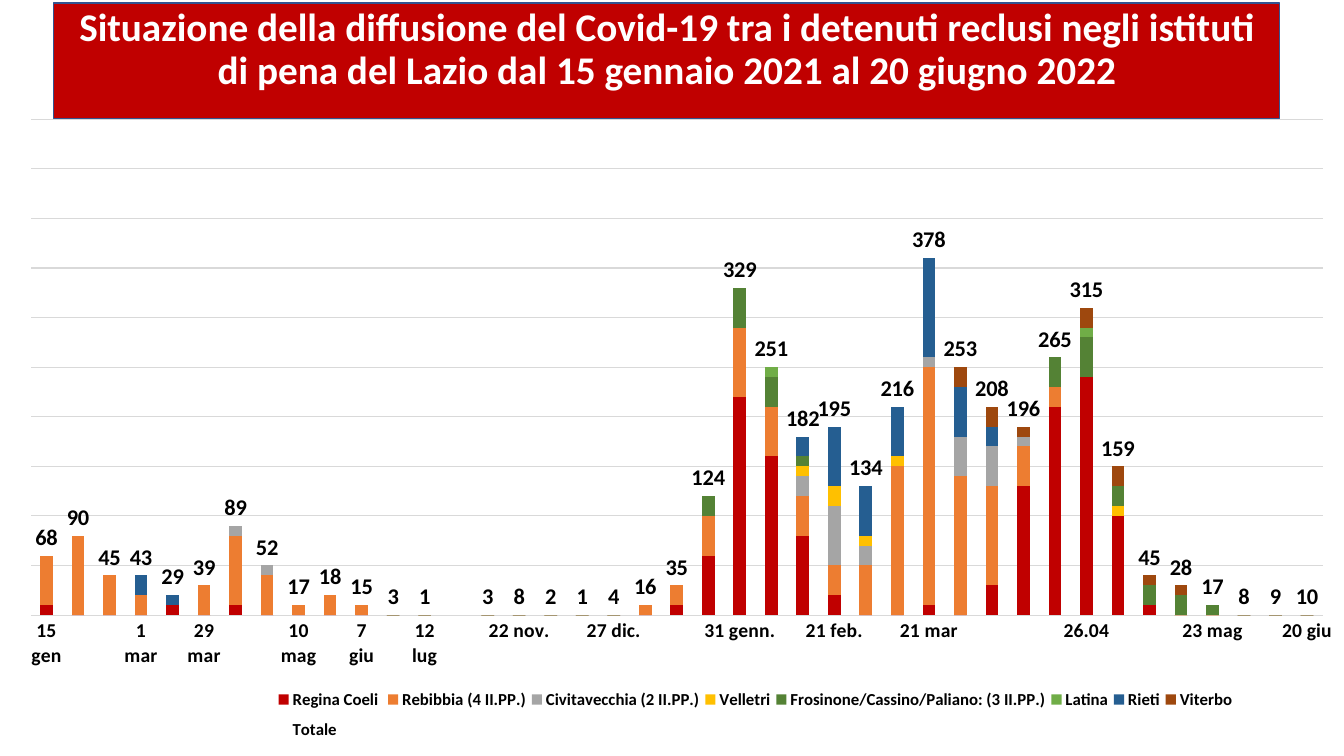
"""Build the slide on Covid-19 among prison inmates in Lazio."""
from dataclasses import dataclass
from typing import NamedTuple, Optional

from lxml.etree import SubElement
from pptx import Presentation
from pptx.chart.data import CategoryChartData
from pptx.dml.color import RGBColor
from pptx.enum.chart import XL_CHART_TYPE, XL_LABEL_POSITION, XL_LEGEND_POSITION, XL_TICK_MARK
from pptx.enum.shapes import MSO_SHAPE
from pptx.enum.text import MSO_ANCHOR, PP_ALIGN
from pptx.oxml import parse_xml
from pptx.oxml.ns import nsdecls, qn
from pptx.util import Inches, Pt


@dataclass(frozen=True)
class Theme:
    font: str = "Calibri"
    banner: str = "C00000"
    banner_line: str = "325491"
    light: str = "FFFFFF"
    dark: str = "000000"
    grid: str = "D9D9D9"
    title_size: int = 28
    value_size: int = 16
    axis_size: int = 14
    legend_size: int = 12


class Area(NamedTuple):
    left: float
    top: float
    width: float
    height: float


class Prison(NamedTuple):
    name: str
    color: str
    waves: dict[int, list[int]]


class Period(NamedTuple):
    label: str
    totals: list[Optional[int]]


THEME = Theme()
WIDTH, HEIGHT = Inches(13.33), Inches(7.5)
BANNER = Area(0.04, 0.004, 0.912, 0.153)
CHART = Area(0.016, 0.157, 0.984, 0.843)
PLOT = Area(0.007, 0.001, 0.977, 0.778)
LEGEND = Area(0.19, 0.88, 0.73, 0.11)
TITLE = ("Situazione della diffusione del Covid-19 tra i detenuti reclusi negli istituti "
         "di pena del Lazio dal 15 gennaio 2021 al 20 giugno 2022")
PRISONS = (
    Prison("Regina Coeli ", "C00000", {
        0: [10], 4: [10], 6: [10], 20: [10, 60, 220, 160, 80, 20],
        28: [10], 30: [30, 130, 210, 240, 100, 10]}),
    Prison("Rebibbia (4 II.PP.)", "ED7D31", {
        0: [50, 80, 40, 20], 5: [30, 70, 40, 10, 20, 10],
        19: [10, 20, 40, 70, 50, 40, 30, 50, 150, 240, 140, 100, 40, 20]}),
    Prison("Civitavecchia (2 II.PP.)", "A5A5A5", {
        6: [10, 10], 24: [20, 60, 20], 28: [10, 40, 40, 10]}),
    Prison("Velletri", "FFC000", {24: [10, 20, 10, 10], 34: [10]}),
    Prison("Frosinone/Cassino/Paliano: (3 II.PP.)", "548235", {
        21: [20, 40, 30, 10], 32: [30, 40, 20, 20, 20, 10]}),
    Prison("Latina", "70AD47", {23: [10], 33: [10]}),
    Prison("Rieti", "255E91", {3: [20, 10], 24: [20, 60, 50, 50, 100, 50, 20]}),
    Prison("Viterbo", "9E480E", {29: [20, 20, 10], 33: [20, 20, 10, 10]}),
)
PERIODS = (
    Period("15\ngen", [68, 90, 45]),
    Period("1\nmar", [43, 29]),
    Period("29\nmar", [39, 89, 52]),
    Period("10\nmag", [17, 18]),
    Period("7\ngiu", [15, 3]),
    Period("12\nlug", [1, None, 3]),
    Period("22 nov.", [8, 2, 1]),
    Period("27 dic.", [4, 16, 35, 124]),
    Period("31 genn.", [329, 251, 182]),
    Period("21 feb.", [195, 134, 216]),
    Period("21 mar", [378, 253, 208, 196, 265]),
    Period("26.04", [315, 159, 45, 28]),
    Period("23 mag", [17, 8, 9]),
    Period("20 giu", [10]),
)
TOTALS = [total for period in PERIODS for total in period.totals]
LABELS = ["" if place_in_period else period.label
          for period in PERIODS for place_in_period in range(len(period.totals))]


def weekly_counts(prison: Prison) -> list[Optional[int]]:
    counts = [None if total is None else 0 for total in TOTALS]
    for start, wave in prison.waves.items():
        counts[start:start + len(wave)] = wave
    return counts


def place(area: Area) -> tuple[int, ...]:
    return tuple(round(share * side) for share, side in zip(area, (WIDTH, HEIGHT) * 2))


def style_font(font, size: int, color: str) -> None:
    font.name, font.size, font.bold = THEME.font, Pt(size), True
    font.color.rgb = RGBColor.from_string(color)


def style_line(line, color: str, width: float) -> None:
    line.color.rgb = RGBColor.from_string(color)
    line.width = Pt(width)


def set_layout(parent, area: Area, position: int, inner: bool = False) -> None:
    for old in parent.findall(qn("c:layout")):
        parent.remove(old)
    layout = parse_xml(f"<c:layout {nsdecls('c')}/>")
    manual = SubElement(layout, qn("c:manualLayout"))
    if inner:
        SubElement(manual, qn("c:layoutTarget"), val="inner")
    for mode in ("xMode", "yMode"):
        SubElement(manual, qn(f"c:{mode}"), val="edge")
    for side, share in zip("xywh", area):
        SubElement(manual, qn(f"c:{side}"), val=str(share))
    parent.insert(position, layout)


def draw_banner(page) -> None:
    box = page.shapes.add_shape(MSO_SHAPE.RECTANGLE, *place(BANNER))
    box.shadow.inherit = False
    box.fill.solid()
    box.fill.fore_color.rgb = RGBColor.from_string(THEME.banner)
    style_line(box.line, THEME.banner_line, 1)
    box.text_frame.word_wrap = True
    box.text_frame.vertical_anchor = MSO_ANCHOR.TOP
    para = box.text_frame.paragraphs[0]
    para.alignment, para.line_spacing, para.space_before = PP_ALIGN.CENTER, 0.9, Pt(10)
    span = para.add_run()
    span.text = TITLE
    style_font(span.font, THEME.title_size, THEME.light)


def draw_chart(page) -> None:
    data = CategoryChartData()
    data.categories = LABELS
    for prison in PRISONS:
        data.add_series(prison.name, weekly_counts(prison))
    data.add_series("Totale", TOTALS)
    chart = page.shapes.add_chart(XL_CHART_TYPE.COLUMN_STACKED, *place(CHART), data).chart
    chart.has_title = False
    chart.font.name, chart.font.size = THEME.font, Pt(10)
    plot = chart.plots[0]
    plot.gap_width, plot.overlap, plot.vary_by_categories = 150, 100, False
    *stacks, total = plot.series
    for series, prison in zip(stacks, PRISONS):
        series.format.fill.solid()
        series.format.fill.fore_color.rgb = RGBColor.from_string(prison.color)
    total.format.fill.background()
    labels = total.data_labels
    labels.show_value, labels.position = True, XL_LABEL_POSITION.INSIDE_BASE
    style_font(labels.font, THEME.value_size, THEME.dark)
    weeks, values = chart.category_axis, chart.value_axis
    weeks.major_tick_mark = XL_TICK_MARK.NONE
    style_font(weeks.tick_labels.font, THEME.axis_size, THEME.dark)
    style_line(weeks.format.line, THEME.grid, 0.75)
    values.minimum_scale, values.maximum_scale, values.major_unit = 0, 500, 50
    values.visible = False
    style_line(values.major_gridlines.format.line, THEME.grid, 0.75)
    chart.has_legend = True
    chart.legend.position = XL_LEGEND_POSITION.BOTTOM
    chart.legend.include_in_layout = False
    style_font(chart.legend.font, THEME.legend_size, THEME.dark)
    set_layout(chart.element.find(f".//{qn('c:plotArea')}"), PLOT, 0, inner=True)
    set_layout(chart.element.find(f".//{qn('c:legend')}"), LEGEND, 1)


def main() -> None:
    deck = Presentation()
    deck.slide_width, deck.slide_height = WIDTH, HEIGHT
    page = deck.slides.add_slide(deck.slide_layouts[6])
    draw_banner(page)
    draw_chart(page)
    deck.save("out.pptx")


if __name__ == "__main__":
    main()
